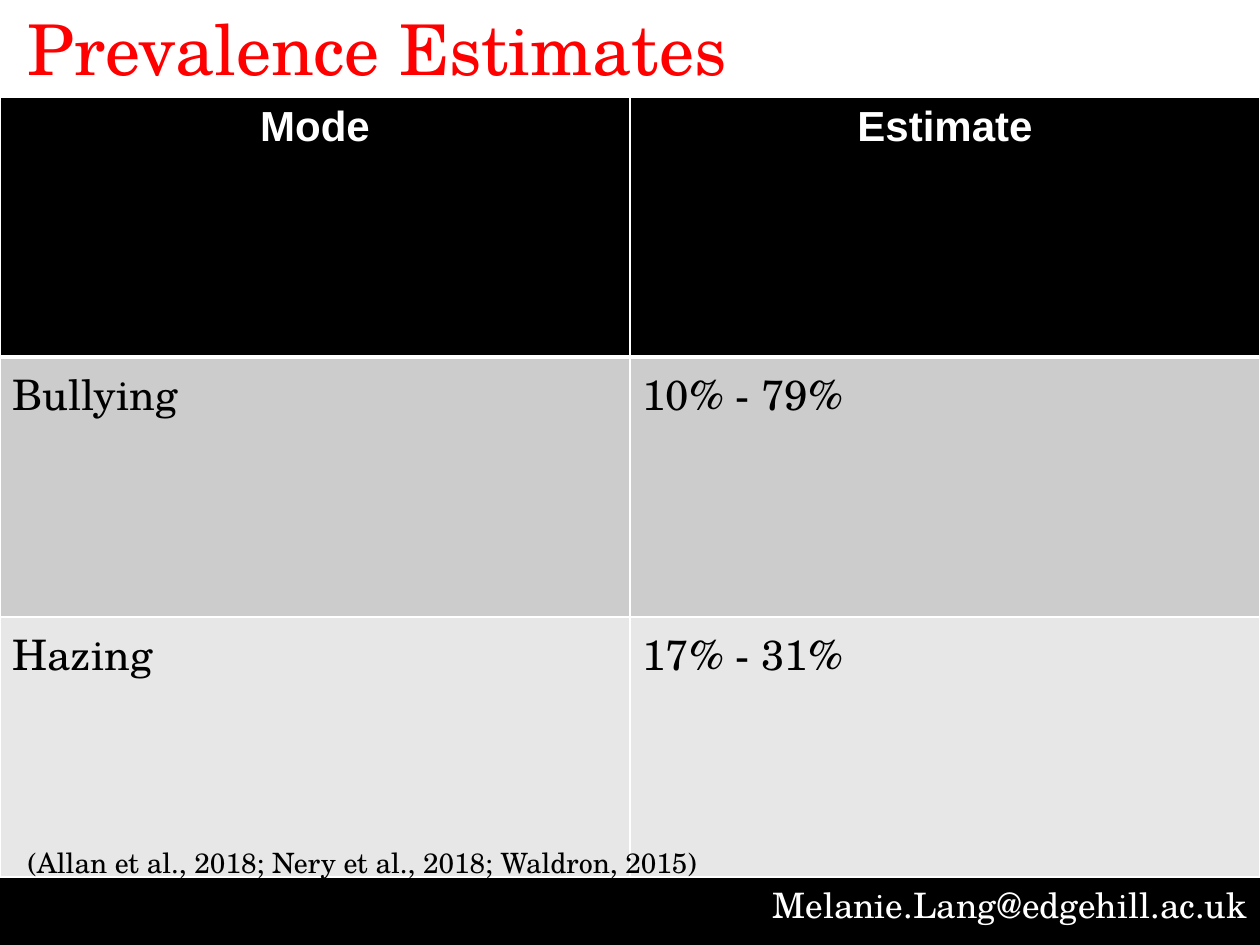
from pptx import Presentation
from pptx.dml.color import RGBColor
from pptx.enum.shapes import MSO_SHAPE as Shape
from pptx.enum.text import MSO_ANCHOR as Anchor, PP_ALIGN as Align
from pptx.oxml import parse_xml
from pptx.oxml.ns import nsdecls
from pptx.util import Inches, Pt

WHITE = RGBColor(0xFF, 0xFF, 0xFF)
BLACK = RGBColor(0, 0, 0)
RED = RGBColor(0xFF, 0, 0)
DARK = RGBColor(0xCC, 0xCC, 0xCC)
LIGHT = RGBColor(0xE7, 0xE7, 0xE7)
SERIF, SANS = "TeX Gyre Schola", "Arial"


def write(frame, text, size, color, align=Align.LEFT, face=SERIF, bold=False):
    frame.word_wrap = True
    para = frame.paragraphs[0]
    para.text = text
    para.alignment = align
    font = para.font
    font.name, font.size, font.bold = face, Pt(size), bold
    font.color.rgb = color


def edge(cell, sides):
    props = cell._tc.get_or_add_tcPr()
    for spot, (side, width) in enumerate(sides.items()):
        props.insert(spot, parse_xml(
            f'<a:ln{side} {nsdecls("a")} w="{Pt(width)}"><a:solidFill>'
            f'<a:srgbClr val="{WHITE}"/></a:solidFill></a:ln{side}>'))


deck = Presentation()
deck.slide_width, deck.slide_height = Inches(10), Inches(7.5)
wide, high = deck.slide_width, deck.slide_height
slide = deck.slides.add_slide(deck.slide_layouts[5])
shapes = slide.shapes

# Title
title = shapes.title
title.left, title.top = Inches(0.12), 0
title.width, title.height = Inches(7.71), Inches(0.76)
title.text_frame.vertical_anchor = Anchor.MIDDLE
write(title.text_frame, "Prevalence Estimates", 40, RED)

# Footer bar with contact
top = Inches(6.91)
bar = shapes.add_shape(Shape.RECTANGLE, 0, top, wide, high - top)
bar.shadow.inherit = False
bar.fill.solid()
bar.fill.fore_color.rgb = BLACK
bar.line.fill.background()
mail = shapes.add_textbox(Inches(5.55), Inches(6.96), Inches(4.45), Inches(0.44))
write(mail.text_frame, "Melanie.Lang@edgehill.ac.uk", 20, WHITE, Align.RIGHT)

# Table of estimates
rows = [("Mode", "Estimate"), ("Bullying", "10% - 79%"), ("Hazing", "17% - 31%")]
fills = [BLACK, DARK, LIGHT]
grid = shapes.add_table(3, 2, 0, Inches(0.77), wide, Inches(6.19)).table
for r, (row, fill) in enumerate(zip(rows, fills)):
    for c, text in enumerate(row):
        cell = grid.cell(r, c)
        cell.fill.solid()
        cell.fill.fore_color.rgb = fill
        if r == 0:
            write(cell.text_frame, text, 24, WHITE, Align.CENTER, SANS, True)
        else:
            write(cell.text_frame, text, 24, BLACK)
        edge(cell, {"L": 1, "R": 1, "T": 3 if r == 1 else 1, "B": 3 if r == 0 else 1})

# Sources
cite = shapes.add_textbox(Inches(0.12), Inches(6.66), Inches(9.69), Inches(0.37))
write(cite.text_frame, "(Allan et al., 2018; Nery et al., 2018; Waldron, 2015)", 16, BLACK)

deck.save("out.pptx")
